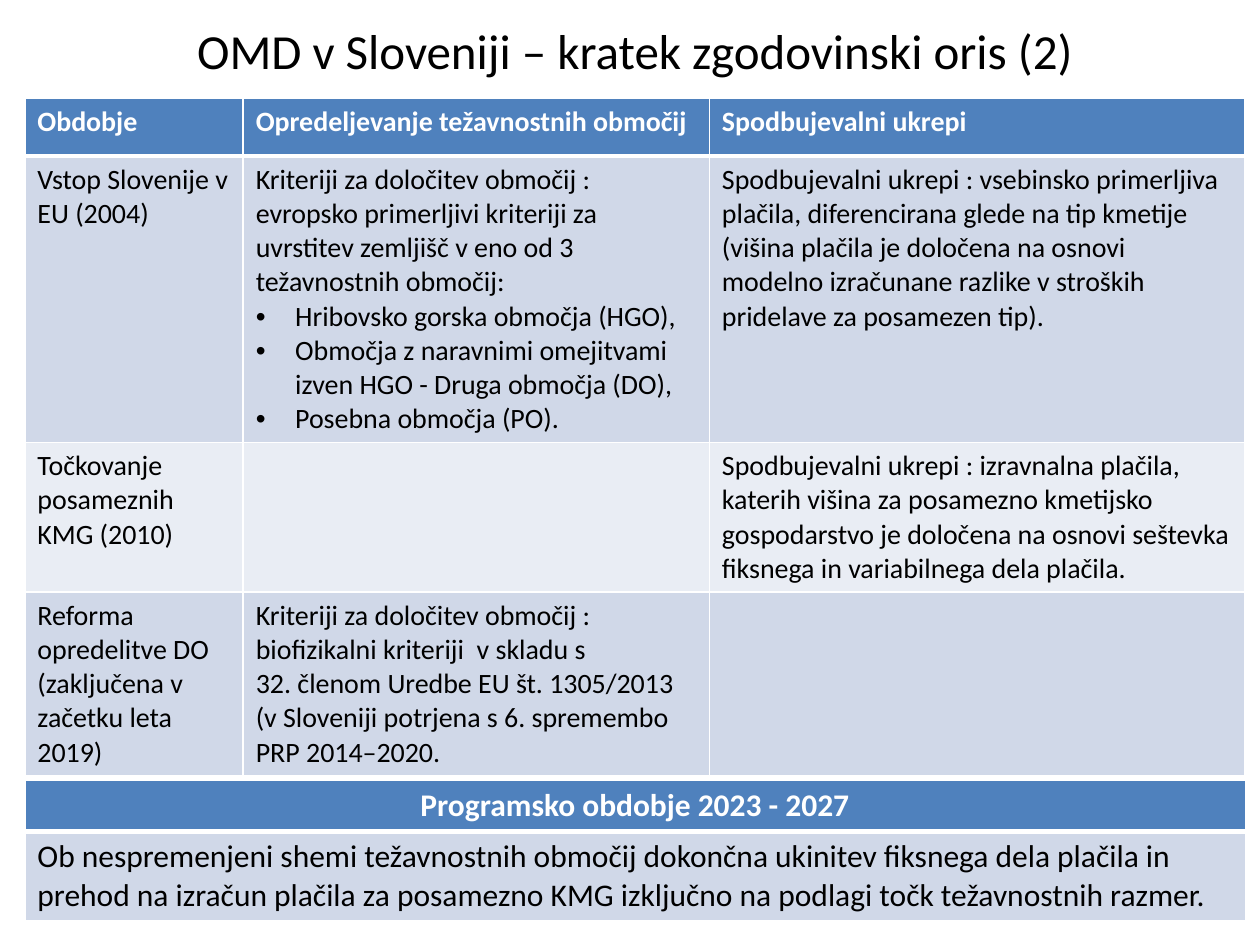
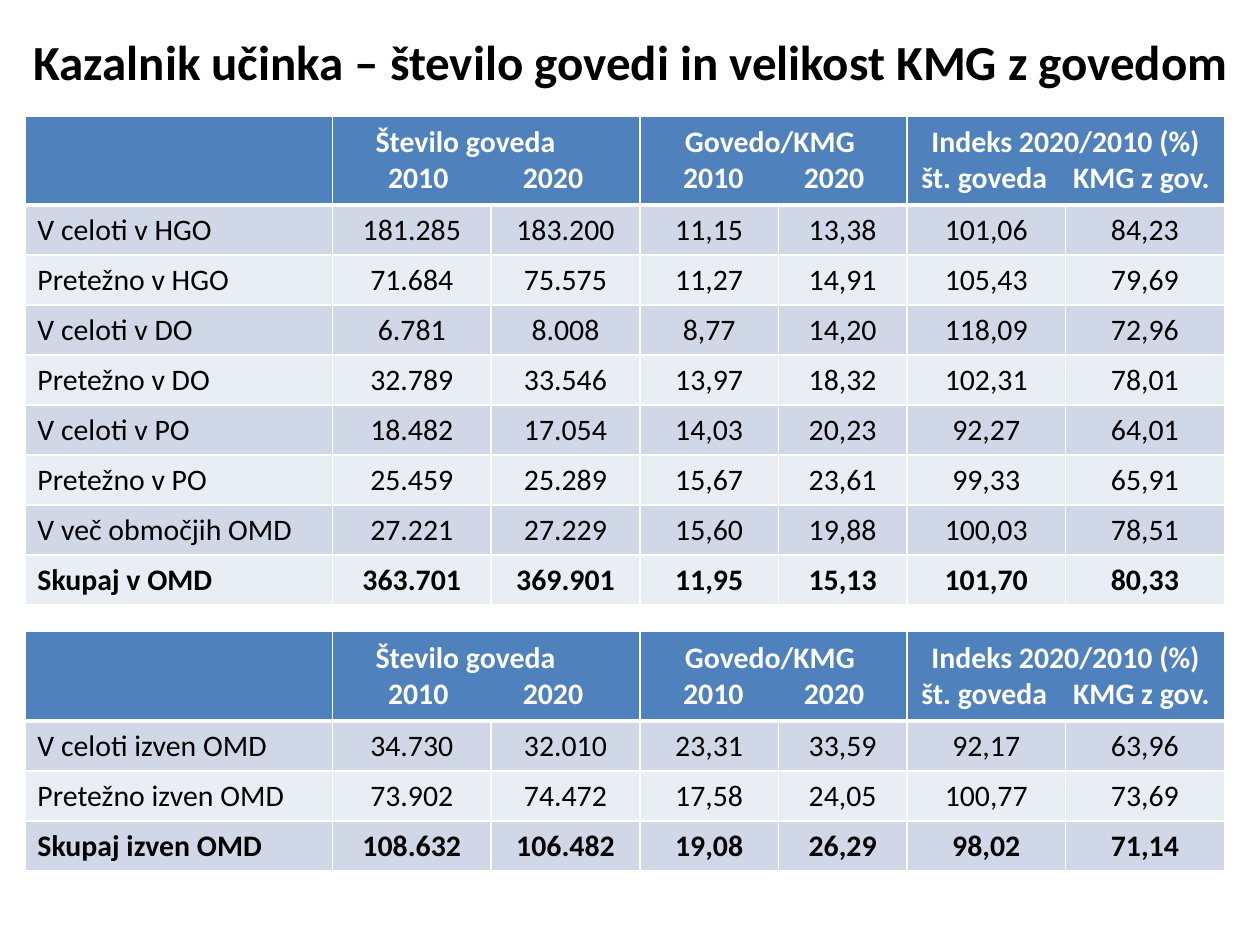
"""Two slides on areas with natural constraints in Slovenia: history and cattle indicators."""
import pptx
import pptx.dml.color
import pptx.enum.text
import pptx.oxml
import pptx.util
from lxml import etree

Pt = pptx.util.Pt
RGBColor = pptx.dml.color.RGBColor
ALIGN = pptx.enum.text.PP_ALIGN
MIDDLE = pptx.enum.text.MSO_ANCHOR.MIDDLE

HEADER_BLUE = RGBColor(0x4F, 0x81, 0xBD)
BANDS = (RGBColor(0xD0, 0xD8, 0xE8), RGBColor(0xE9, 0xED, 0xF4))
BLACK = RGBColor(0, 0, 0)
WHITE = RGBColor(0xFF, 0xFF, 0xFF)
FONT = "Calibri"
LEFT = 14.2
CELL_INSET = 7.2
THIN, THICK = 1, 3
BULLET = "• "
NBSP = chr(160)

HISTORY_TITLE = "OMD v Sloveniji – kratek zgodovinski oris (2)"
HISTORY = [
    ("Obdobje", "Opredeljevanje težavnostnih območij", "Spodbujevalni ukrepi"),
    ("Vstop Slovenije v EU (2004)",
     "Kriteriji za določitev območij : evropsko primerljivi kriteriji za "
     "uvrstitev zemljišč v eno od 3 težavnostnih območij:\n"
     "• Hribovsko gorska območja (HGO),\n"
     "• Območja z naravnimi omejitvami izven HGO - Druga območja (DO),\n"
     "• Posebna območja (PO).",
     "Spodbujevalni ukrepi : vsebinsko primerljiva  plačila, diferencirana "
     "glede na tip kmetije (višina plačila je določena na osnovi modelno "
     "izračunane razlike v stroških pridelave za posamezen tip)."),
    ("Točkovanje posameznih KMG (2010)", "",
     "Spodbujevalni ukrepi : izravnalna plačila, katerih višina za posamezno "
     "kmetijsko gospodarstvo je določena na osnovi seštevka fiksnega in "
     "variabilnega dela plačila."),
    ("Reforma opredelitve DO (zaključena v začetku leta 2019)",
     "Kriteriji za določitev območij : biofizikalni kriteriji  v skladu s "
     f"32.{NBSP}členom Uredbe EU št.{NBSP}1305/2013 (v Sloveniji potrjena s "
     f"6.{NBSP}spremembo PRP 2014–2020.", ""),
]
HISTORY_COLUMNS = (124.8, 266.4, 306.2)
HISTORY_ROWS = (33, 163.5, 85.5, 105)

PROGRAMME = [
    ("Programsko obdobje 2023 - 2027",),
    ("Ob nespremenjeni shemi težavnostnih območij dokončna ukinitev fiksnega "
     "dela plačila in prehod na izračun plačila za posamezno KMG izključno na "
     "podlagi točk težavnostnih razmer.",),
]
PROGRAMME_ROWS = (29.5, 50.5)

CATTLE_TITLE = "Kazalnik učinka – število govedi in velikost KMG z govedom"
CATTLE_GROUPS = [
    {"heading": ("Število goveda", 76), "labels": (("2010", 49), ("2020", 126))},
    {"heading": ("Govedo/KMG", 74.3), "labels": (("2010", 42), ("2020", 111))},
    {"heading": ("Indeks 2020/2010 (%)", 90.7),
     "labels": (("št. goveda", 44.2), ("KMG z gov.", 134))},
]
CATTLE_INSIDE = [
    ("V celoti v HGO", "181.285", "183.200", "11,15", "13,38", "101,06", "84,23"),
    ("Pretežno v HGO", "71.684", "75.575", "11,27", "14,91", "105,43", "79,69"),
    ("V celoti v DO", "6.781", "8.008", "8,77", "14,20", "118,09", "72,96"),
    ("Pretežno v DO", "32.789", "33.546", "13,97", "18,32", "102,31", "78,01"),
    ("V celoti v PO", "18.482", "17.054", "14,03", "20,23", "92,27", "64,01"),
    ("Pretežno v PO", "25.459", "25.289", "15,67", "23,61", "99,33", "65,91"),
    ("V več območjih OMD", "27.221", "27.229", "15,60", "19,88", "100,03", "78,51"),
    ("Skupaj v OMD", "363.701", "369.901", "11,95", "15,13", "101,70", "80,33"),
]
CATTLE_OUTSIDE = [
    ("V celoti izven OMD", "34.730", "32.010", "23,31", "33,59", "92,17", "63,96"),
    ("Pretežno izven OMD", "73.902", "74.472", "17,58", "24,05", "100,77", "73,69"),
    ("Skupaj izven OMD", "108.632", "106.482", "19,08", "26,29", "98,02", "71,14"),
]
CATTLE_COLUMNS = (175.8, 90.7, 85, 79.2, 73.4, 90.7, 90.7)
CATTLE_HEADER, CATTLE_ROW = 51, 28.6


def format_text(frame, size, color, bold, align=None):
    """Give every paragraph of a text frame the same look."""
    for para in frame.paragraphs:
        if align is not None:
            para.alignment = align
        for span in para.runs:
            span.font.name = FONT
            span.font.size = Pt(size)
            span.font.bold = bold
            span.font.color.rgb = color


def drawing_element(tag, *children, **attributes):
    """Make an element in the drawing namespace."""
    element = etree.Element(pptx.oxml.ns.qn("a:" + tag))
    for name, value in attributes.items():
        element.set(name, str(value))
    element.extend(children)
    return element


def add_properties(para, *children, **attributes):
    """Add drawing elements and attributes to the properties of a paragraph."""
    properties = para._p.get_or_add_pPr()
    for name, value in attributes.items():
        properties.set(name, str(value))
    properties.extend(children)


def add_borders(cell, top, bottom):
    """Draw white lines around a cell, thin at the sides."""
    properties = cell._tc.get_or_add_tcPr()
    sides = (("lnL", THIN), ("lnR", THIN), ("lnT", top), ("lnB", bottom))
    for position, (tag, width) in enumerate(sides):
        fill = drawing_element("solidFill", drawing_element("srgbClr", val=WHITE))
        properties.insert(position, drawing_element(tag, fill, w=int(Pt(width))))


def make_bullets(frame):
    """Turn lines that start with the bullet mark into hanging bullets."""
    for para in frame.paragraphs:
        if para.text.startswith(BULLET):
            para.text = para.text[len(BULLET):]
            indent = int(Pt(22.5))
            add_properties(para, drawing_element("buFont", typeface="Arial"),
                           drawing_element("buChar", char=BULLET.strip()),
                           marL=indent, indent=-indent)


def add_page(deck, title, left, top, width, height, bold):
    """Add a slide with its title in place."""
    page = deck.slides.add_slide(deck.slide_layouts[5])
    box = page.shapes.title
    box.left, box.top, box.width, box.height = map(Pt, (left, top, width, height))
    frame = box.text_frame
    frame.text = title
    frame.auto_size = pptx.enum.text.MSO_AUTO_SIZE.NONE
    frame.vertical_anchor = MIDDLE
    format_text(frame, 28, BLACK, bold, ALIGN.CENTER)
    return page


def add_grid(page, top, rows, columns, heights, size):
    """Add a table with a blue header row and banded body rows."""
    grid = page.shapes.add_table(len(rows), len(columns), Pt(LEFT), Pt(top),
                                 Pt(sum(columns)), Pt(sum(heights))).table
    for column, width in zip(grid.columns, columns):
        column.width = Pt(width)
    for index, (row, texts, height) in enumerate(zip(grid.rows, rows, heights)):
        row.height = Pt(height)
        header = index == 0
        for cell, text in zip(row.cells, texts):
            cell.fill.solid()
            cell.fill.fore_color.rgb = HEADER_BLUE if header else BANDS[(index - 1) % 2]
            add_borders(cell, THICK if index == 1 else THIN, THICK if header else THIN)
            cell.text_frame.text = text
            make_bullets(cell.text_frame)
            format_text(cell.text_frame, size, WHITE if header else BLACK, header)
    return grid


def add_group_header(grid, column, group):
    """Merge two header cells and set a heading above two column labels."""
    cell = grid.cell(0, column)
    cell.merge(grid.cell(0, column + 1))
    cell.vertical_anchor = MIDDLE
    cell.margin_right = 0
    lines = ((group["heading"],), group["labels"])
    cell.text_frame.text = "\n".join(
        "".join("\t" + text for text, center in line) for line in lines)
    format_text(cell.text_frame, 17, WHITE, True, ALIGN.LEFT)
    for para, line in zip(cell.text_frame.paragraphs, lines):
        stops = [drawing_element("tab", pos=int(Pt(center - CELL_INSET)), algn="ctr")
                 for text, center in line]
        add_properties(para, drawing_element("tabLst", *stops))


def add_cattle_grid(page, top, records):
    """Add a cattle table whose last row is a bold total."""
    blank_header = ("",) * len(CATTLE_COLUMNS)
    heights = [CATTLE_HEADER] + [CATTLE_ROW] * len(records)
    grid = add_grid(page, top, [blank_header] + records, CATTLE_COLUMNS, heights, 17)
    for number, group in enumerate(CATTLE_GROUPS):
        add_group_header(grid, 1 + 2 * number, group)
    for index in range(1, len(records) + 1):
        for column in range(len(CATTLE_COLUMNS)):
            cell = grid.cell(index, column)
            cell.vertical_anchor = MIDDLE
            if column:
                cell.margin_left = cell.margin_right = cell.margin_top = Pt(0.75)
                cell.margin_bottom = 0
            format_text(cell.text_frame, 17, BLACK, index == len(records),
                        ALIGN.CENTER if column else ALIGN.LEFT)


def main():
    """Build and save the deck."""
    deck = pptx.Presentation()
    deck.slide_width, deck.slide_height = Pt(720), Pt(540)

    history = add_page(deck, HISTORY_TITLE, 38.7, 0, 648, 56.5, False)
    add_grid(history, 56.2, HISTORY, HISTORY_COLUMNS, HISTORY_ROWS, 16)
    programme = add_grid(history, 445.7, PROGRAMME, (sum(HISTORY_COLUMNS),),
                         PROGRAMME_ROWS, 18)
    programme.cell(0, 0).text_frame.paragraphs[0].alignment = ALIGN.CENTER

    cattle = add_page(deck, CATTLE_TITLE, 8.6, 15, 703, 40, True)
    add_cattle_grid(cattle, 66.2, CATTLE_INSIDE)
    add_cattle_grid(cattle, 361, CATTLE_OUTSIDE)

    deck.save("out.pptx")


if __name__ == "__main__":
    main()
